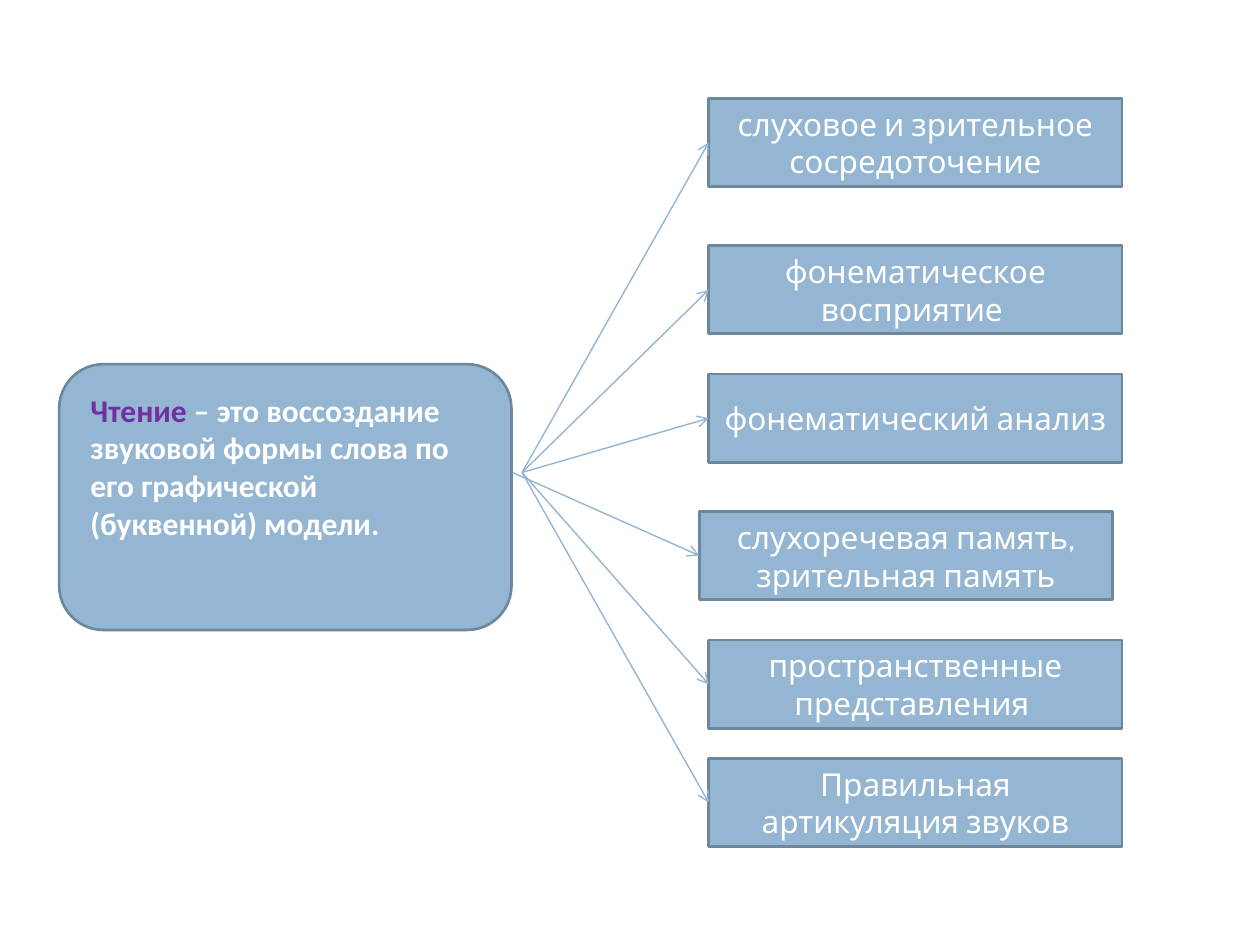
from lxml import etree
from pptx import Presentation
from pptx.dml.color import RGBColor
from pptx.enum import shapes as sh, text as tx
from pptx.oxml.ns import qn
from pptx.util import Pt

BLUE, EDGE, WHITE, PURPLE = "94B6D2", "6D879B", "FFFFFF", "7030A0"

# text, left, top
SKILLS = [
    ("слуховое и зрительное сосредоточение", 405, 56.2),
    ("фонематическое восприятие ", 405, 140.4),
    ("фонематический анализ", 405, 213.8),
    ("слухоречевая память, зрительная память", 399.6, 292.3),
    ("пространственные представления ", 405, 365.8),
    ("Правильная артикуляция звуков", 405, 433.4),
]
READING = [
    ("Чтение", PURPLE),
    (" – это воссоздание звуковой формы слова по его графической "
     "(буквенной) модели.", WHITE),
]
WIDE, HIGH = 236.2, 50.4
REACH = 106.7  # horizontal run of every arrow
HUB = 270  # height at which the arrows start


def color(code):
    return RGBColor.from_string(code)


def write(shape, runs, font="Cabin", size=18, bold=False,
          align=tx.PP_ALIGN.CENTER, anchor=tx.MSO_ANCHOR.MIDDLE):
    frame = shape.text_frame
    frame.word_wrap = True
    frame.vertical_anchor = anchor
    para = frame.paragraphs[0]
    para.alignment = align
    for words, code in runs:
        run = para.add_run()
        run.text = words
        run.font.name = font
        run.font.size = Pt(size)
        run.font.bold = bold
        run.font.color.rgb = color(code)


def block(slide, kind, left, top, wide, high):
    shape = slide.shapes.add_shape(kind, Pt(left), Pt(top), Pt(wide), Pt(high))
    shape.shadow.inherit = False
    shape.fill.solid()
    shape.fill.fore_color.rgb = color(BLUE)
    shape.line.color.rgb = color(EDGE)
    shape.line.width = Pt(1.5)
    return shape


def arrow(slide, x1, y1, x2, y2):
    line = slide.shapes.add_connector(
        sh.MSO_CONNECTOR.STRAIGHT, Pt(x1), Pt(y1), Pt(x2), Pt(y2))
    line.line.color.rgb = color(BLUE)
    line.line.width = Pt(0.79)
    etree.SubElement(line.line._get_or_add_ln(), qn("a:tailEnd"), type="arrow")
    etree.SubElement(line._element.spPr, qn("a:effectLst"))


def main():
    deck = Presentation()
    deck.slide_width, deck.slide_height = Pt(720), Pt(540)
    slide = deck.slides.add_slide(deck.slide_layouts[6])

    for words, left, top in SKILLS:
        box = block(slide, sh.MSO_SHAPE.RECTANGLE, left, top, WIDE, HIGH)
        write(box, [(words, WHITE)])

    block(slide, sh.MSO_SHAPE.ROUNDED_RECTANGLE, 33.8, 208.1, 258.5, 151.9)
    note = slide.shapes.add_textbox(Pt(44.6), Pt(219.6), Pt(WIDE), Pt(138.2))
    write(note, READING, font="Calibri", bold=True,
          align=tx.PP_ALIGN.LEFT, anchor=tx.MSO_ANCHOR.TOP)

    for _, left, top in SKILLS:
        arrow(slide, left - REACH, HUB, left, top + HIGH / 2)

    deck.save("out.pptx")


if __name__ == "__main__":
    main()
